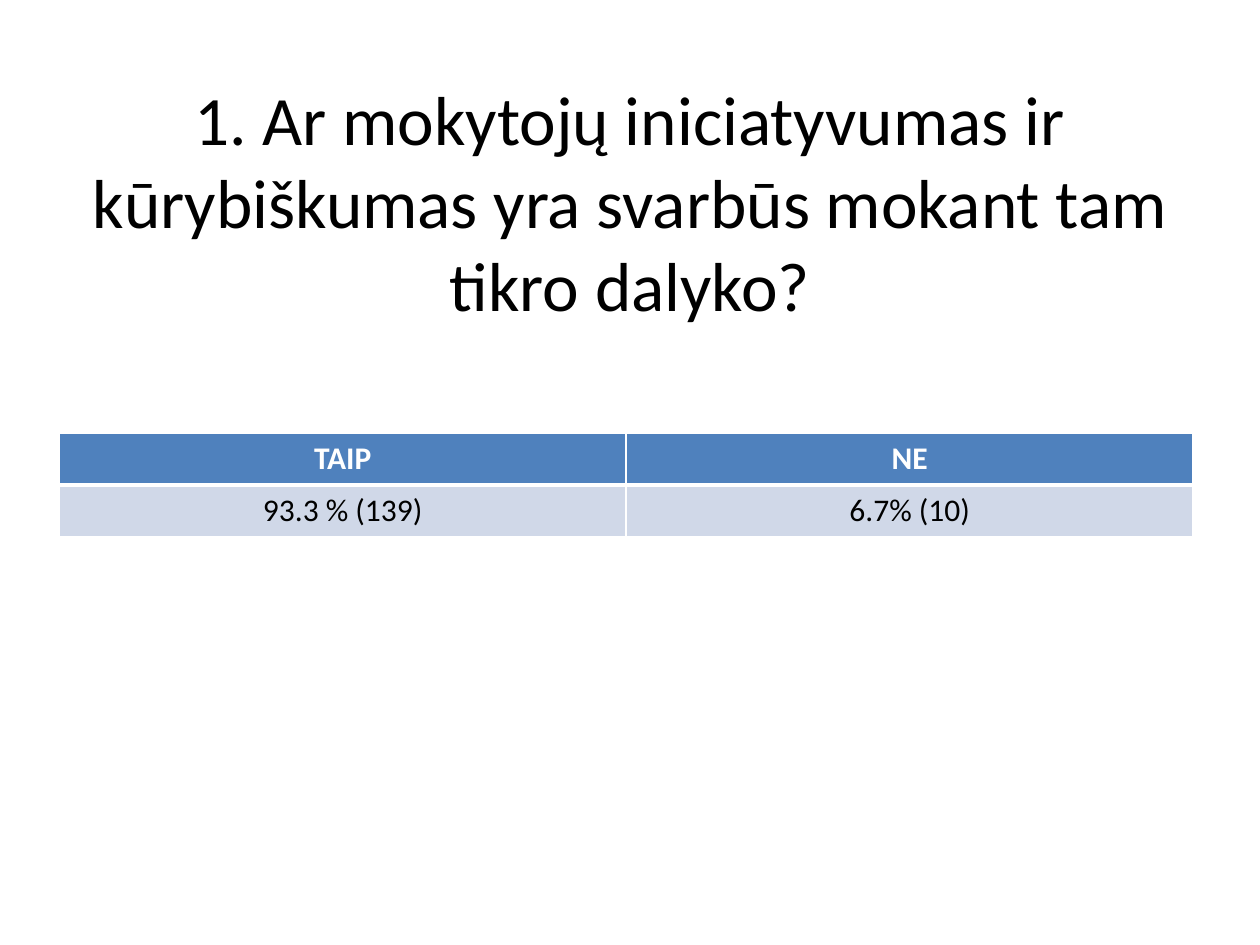
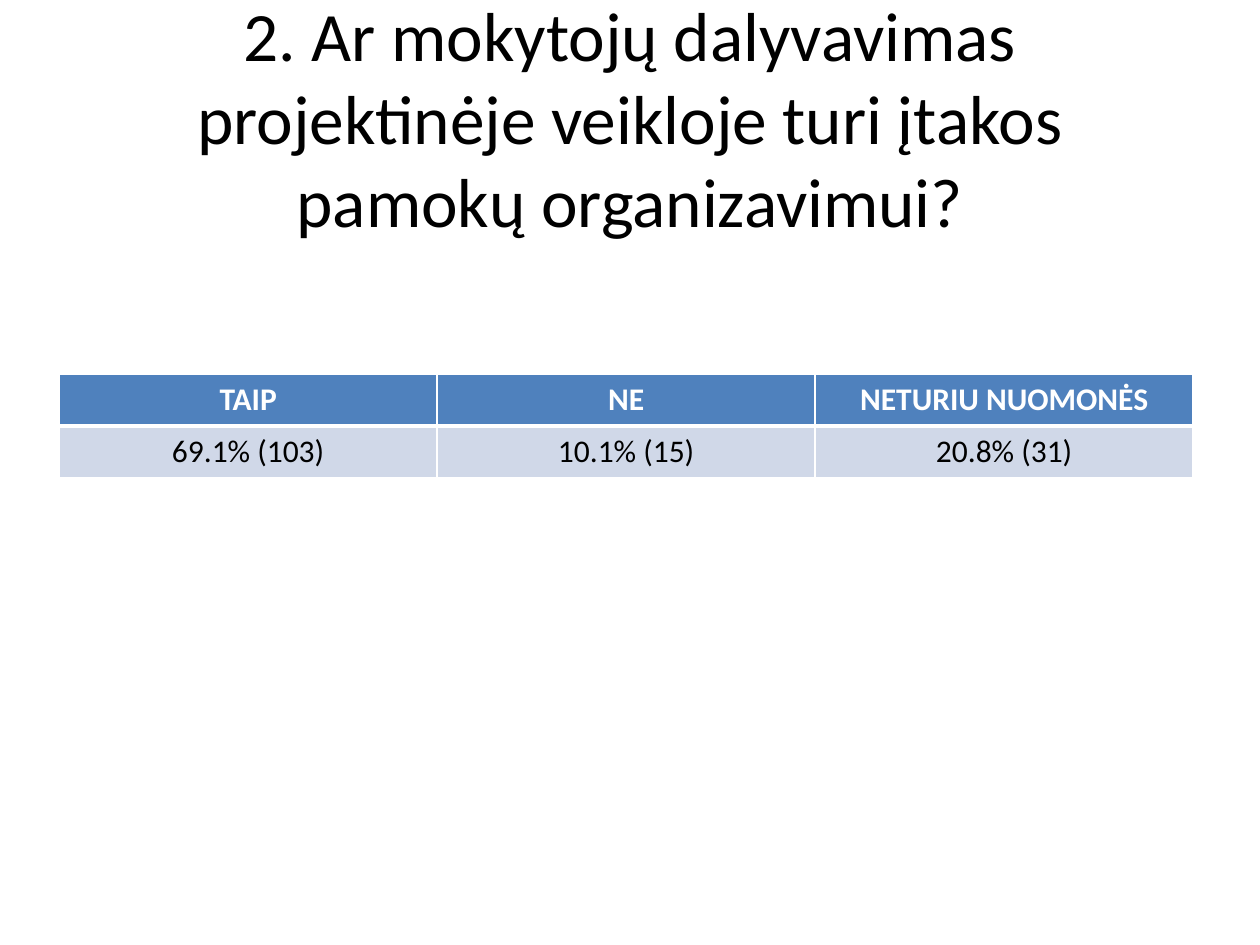
from dataclasses import dataclass

from lxml import etree
from pptx import Presentation
from pptx import util as u
from pptx.dml.color import RGBColor
from pptx.enum import text
from pptx.oxml.ns import qn

FONT = "Calibri"
BLACK = RGBColor(0x00, 0x00, 0x00)
WHITE = RGBColor(0xFF, 0xFF, 0xFF)
HEADER_BLUE = RGBColor(0x4F, 0x81, 0xBD)
ROW_BLUE = RGBColor(0xD0, 0xD8, 0xE8)

TITLE_LEFT = u.Inches(0.5)
TABLE_LEFT = u.Inches(0.47)
CONTENT_WIDTH = u.Inches(9)
ROW_HEIGHT = u.Inches(0.41)


@dataclass(frozen=True)
class Question:
    title: str
    title_top: float
    title_height: float
    table_top: float
    answers: dict[str, str]


QUESTIONS = [
    Question(
        "1. Ar mokytojų iniciatyvumas ir kūrybiškumas yra svarbūs mokant tam tikro dalyko?",
        0.62, 1.95, 3.44,
        {"TAIP": "93.3 % (139)", "NE": "6.7% (10)"},
    ),
    Question(
        "2. Ar mokytojų dalyvavimas projektinėje veikloje turi įtakos pamokų organizavimui?",
        0.3, 1.25, 2.97,
        {"TAIP": "69.1% (103)", "NE": "10.1% (15)", "NETURIU NUOMONĖS": "20.8% (31)"},
    ),
]


def write_text(frame, content: str, *, size: float, color: RGBColor, bold: bool = False) -> None:
    """Put one centred line of formatted text into a text frame."""
    para = frame.paragraphs[0]
    para.alignment = text.PP_ALIGN.CENTER
    span = para.add_run()
    span.text = content
    span.font.name = FONT
    span.font.size = u.Pt(size)
    span.font.bold = bold
    span.font.color.rgb = color


def add_title(page, question: Question) -> None:
    box = page.shapes.add_textbox(
        TITLE_LEFT, u.Inches(question.title_top),
        CONTENT_WIDTH, u.Inches(question.title_height),
    )
    frame = box.text_frame
    frame.word_wrap = True
    frame.vertical_anchor = text.MSO_ANCHOR.MIDDLE
    write_text(frame, question.title, size=39.6, color=BLACK)


def set_borders(cell, **widths: float) -> None:
    """Draw white cell borders; widths are points for L, R, T and B."""
    properties = cell._tc.get_or_add_tcPr()
    for side, width in widths.items():
        line = etree.SubElement(properties, qn(f"a:ln{side}"), w=str(u.Pt(width)))
        fill = etree.SubElement(line, qn("a:solidFill"))
        etree.SubElement(fill, qn("a:srgbClr"), val=str(WHITE))


def add_answers(page, question: Question) -> None:
    rows = [list(question.answers.keys()), list(question.answers.values())]
    table = page.shapes.add_table(
        len(rows), len(question.answers), TABLE_LEFT, u.Inches(question.table_top),
        CONTENT_WIDTH, ROW_HEIGHT * len(rows),
    ).table
    for row_index, labels in enumerate(rows):
        header = row_index == 0
        for column_index, label in enumerate(labels):
            cell = table.cell(row_index, column_index)
            # The thick rule below the header is shared by both rows
            set_borders(cell, L=1, R=1, T=1 if header else 3, B=3 if header else 1)
            cell.fill.solid()
            cell.fill.fore_color.rgb = HEADER_BLUE if header else ROW_BLUE
            write_text(cell.text_frame, label, size=18,
                       color=WHITE if header else BLACK, bold=header)


def main() -> None:
    deck = Presentation()
    deck.slide_width = u.Inches(10)
    deck.slide_height = u.Inches(7.5)
    blank = deck.slide_layouts[6]

    # One page per survey question
    for question in QUESTIONS:
        page = deck.slides.add_slide(blank)
        add_title(page, question)
        add_answers(page, question)

    deck.save("out.pptx")


if __name__ == "__main__":
    main()
